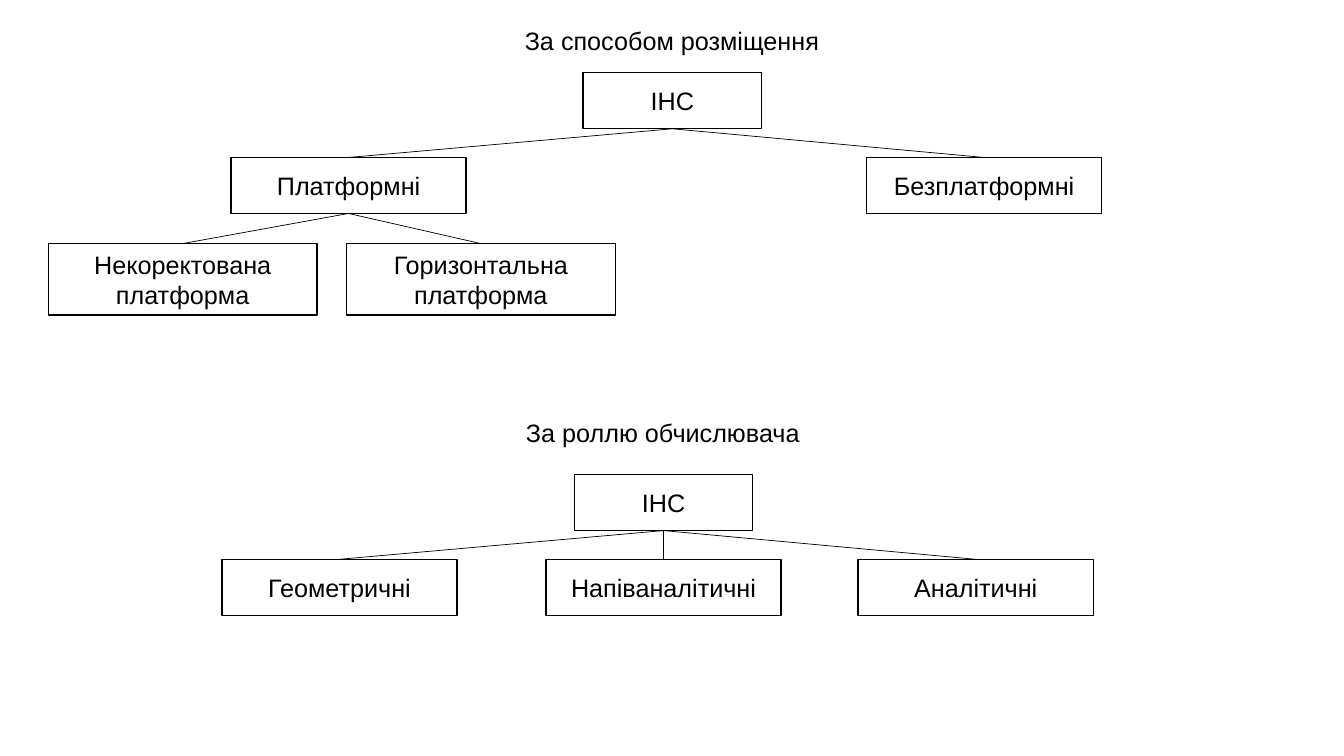
import pptx
import pptx.dml.color
import pptx.enum.shapes
import pptx.enum.text
import pptx.oxml
import pptx.util

Pt = pptx.util.Pt
BLACK = pptx.dml.color.RGBColor(0, 0, 0)
FONT = {"name": "Arial", "size": Pt(18), "bold": False}
FRAME = {
    "word_wrap": True,
    "auto_size": pptx.enum.text.MSO_AUTO_SIZE.NONE,
    "vertical_anchor": pptx.enum.text.MSO_ANCHOR.MIDDLE,
    "margin_left": Pt(7.2), "margin_right": Pt(7.2),
    "margin_top": Pt(3.6), "margin_bottom": Pt(3.6),
}
ROOT_SIZE = (127.5, 40)
CLASS_SIZE = (168, 40)
PLATFORM_SIZE = (192, 51)
HEADING_SIZE = (260, 29)
TOP_SITE, BOTTOM_SITE = 0, 2


def set_attributes(target, values):
    for key, value in values.items():
        setattr(target, key, value)


def write_text(shape, text):
    """Centred black text in the shared format."""
    set_attributes(shape.text_frame, FRAME)
    paragraph = shape.text_frame.paragraphs[0]
    paragraph.text = text
    paragraph.alignment = pptx.enum.text.PP_ALIGN.CENTER
    set_attributes(paragraph.font, FONT)
    paragraph.font.color.rgb = BLACK


def place_heading(heading, text, left, top):
    width, height = HEADING_SIZE
    set_attributes(heading, {"left": Pt(left), "top": Pt(top),
                             "width": Pt(width), "height": Pt(height)})
    write_text(heading, text)


def add_node(slide, text, left, top, size):
    node = slide.shapes.add_shape(
        pptx.enum.shapes.MSO_SHAPE.RECTANGLE,
        Pt(left), Pt(top), Pt(size[0]), Pt(size[1]))
    node.shadow.inherit = False
    node.fill.background()
    node.line.color.rgb = BLACK
    node.line.width = Pt(1)
    write_text(node, text)
    return node


def add_branch(slide, parent, child):
    branch = slide.shapes.add_connector(
        pptx.enum.shapes.MSO_CONNECTOR.STRAIGHT, 0, 0, 0, 0)
    branch.begin_connect(parent, BOTTOM_SITE)
    branch.end_connect(child, TOP_SITE)
    branch.line.color.rgb = BLACK
    branch.line.width = Pt(0.5)
    properties = branch._element.spPr
    properties.append(properties.makeelement(pptx.oxml.ns.qn("a:effectLst"), {}))


def add_children(slide, parent, top, size, children):
    """One row of nodes, each joined to the parent above."""
    nodes = []
    for text, left in children:
        node = add_node(slide, text, left, top, size)
        add_branch(slide, parent, node)
        nodes.append(node)
    return nodes


def main():
    presentation = pptx.Presentation()
    presentation.slide_width, presentation.slide_height = Pt(960), Pt(540)
    slide = presentation.slides.add_slide(presentation.slide_layouts[5])

    # Classification by placement
    place_heading(slide.shapes.title, "За способом розміщення", 350, 14.5)
    placement = add_node(slide, "ІНС", 416.5, 52, ROOT_SIZE)
    platform, _ = add_children(slide, placement, 112.5, CLASS_SIZE, [
        ("Платформні", 165), ("Безплатформні", 619)])
    add_children(slide, platform, 174, PLATFORM_SIZE, [
        ("Некоректована платформа", 34.5),
        ("Горизонтальна платформа", 247.5)])

    # Classification by the role of the computer
    role_heading = slide.shapes.add_textbox(0, 0, 0, 0)
    place_heading(role_heading, "За роллю обчислювача", 343.5, 294.5)
    role = add_node(slide, "ІНС", 410.25, 339, ROOT_SIZE)
    add_children(slide, role, 399.5, CLASS_SIZE, [
        ("Геометричні", 158.5), ("Напіваналітичні", 390), ("Аналітичні", 613)])

    presentation.save("out.pptx")


if __name__ == "__main__":
    main()
